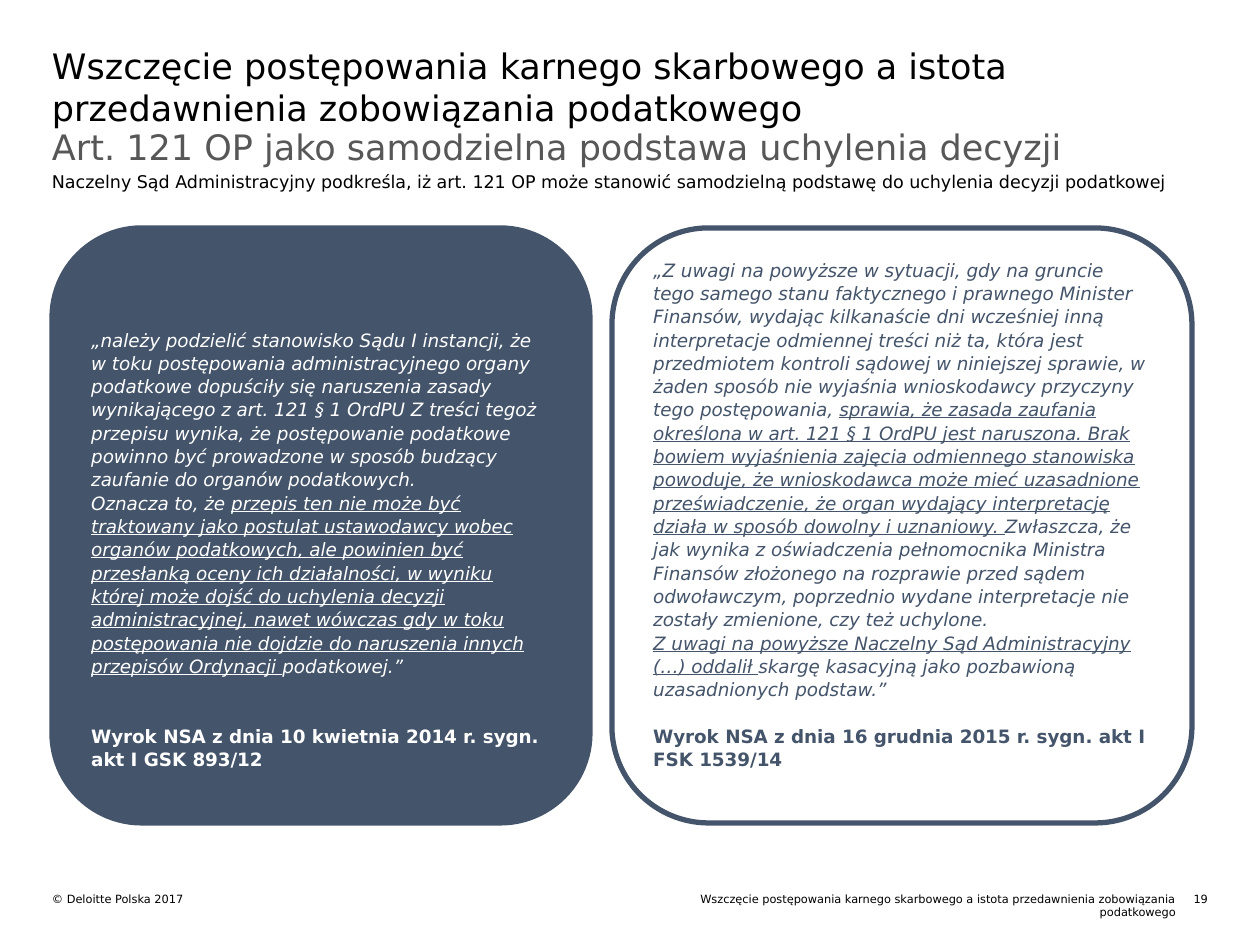
import pptx
import pptx.util
import pptx.dml.color
import pptx.enum.shapes
import pptx.enum.text
import lxml.etree

PX = 914400 // 126
FONT = "DejaVu Sans"
COLORS = {"black": "000000", "grey": "575757", "navy": "44546A", "white": "FFFFFF"}
ALIGN = pptx.enum.text.PP_ALIGN
ANCHOR = pptx.enum.text.MSO_ANCHOR

TITLE = ("Wszczęcie postępowania karnego skarbowego a istota "
         "przedawnienia zobowiązania podatkowego")
SUB = "Art. 121 OP jako samodzielna podstawa uchylenia decyzji"
LEAD = ("Naczelny Sąd Administracyjny podkreśla, iż art. 121 OP może stanowić "
        "samodzielną podstawę do uchylenia decyzji podatkowej")

# Small print: text, box in px, alignment
FOOT = [
    ("© Deloitte Polska 2017", (52, 892, 553, 14), ALIGN.LEFT),
    (TITLE, (670, 892, 506, 28), ALIGN.RIGHT),
    ("19", (1177, 892, 31, 14), ALIGN.RIGHT),
]

# Each quote is a list of paragraphs; a paragraph is a list of (text, underlined)
CARDS = [
    {"box": (52, 228, 538, 595), "fill": "navy", "ink": "white",
     "top": 60, "bottom": 13, "gap": 26.7,
     "quote": [
         [("„należy podzielić stanowisko Sądu I instancji, że w toku postępowania "
           "administracyjnego organy podatkowe dopuściły się naruszenia zasady "
           "wynikającego z art. 121 § 1 OrdPU Z treści tegoż przepisu wynika, że "
           "postępowanie podatkowe powinno być prowadzone w sposób budzący "
           "zaufanie do organów podatkowych.", False)],
         [("Oznacza to, że ", False),
          ("przepis ten nie może być traktowany jako postulat ustawodawcy wobec "
           "organów podatkowych, ale powinien być przesłanką oceny ich "
           "działalności, w wyniku której może dojść do uchylenia decyzji "
           "administracyjnej, nawet wówczas gdy w toku postępowania nie dojdzie "
           "do naruszenia innych przepisów Ordynacji ", True),
          ("podatkowej.”", False)],
     ],
     "case": "Wyrok NSA z dnia 10 kwietnia 2014 r. sygn. akt I GSK 893/12"},
    {"box": (612, 228, 580, 595), "fill": "white", "ink": "navy",
     "top": 13, "bottom": 36, "gap": 13.3,
     "quote": [
         [("„Z uwagi na powyższe w sytuacji, gdy na gruncie tego samego stanu "
           "faktycznego i prawnego Minister Finansów, wydając kilkanaście dni "
           "wcześniej inną interpretacje odmiennej treści niż ta, która jest "
           "przedmiotem kontroli sądowej w niniejszej sprawie, w żaden sposób nie "
           "wyjaśnia wnioskodawcy przyczyny tego postępowania, ", False),
          ("sprawia, że zasada zaufania określona w art. 121 § 1 OrdPU jest "
           "naruszona. Brak bowiem wyjaśnienia zajęcia odmiennego stanowiska "
           "powoduje, że wnioskodawca może mieć uzasadnione przeświadczenie, że "
           "organ wydający interpretację działa w sposób dowolny i uznaniowy. ", True),
          ("Zwłaszcza, że jak wynika z oświadczenia pełnomocnika Ministra Finansów "
           "złożonego na rozprawie przed sądem odwoławczym, poprzednio wydane "
           "interpretacje nie zostały zmienione, czy też uchylone.", False)],
         [("Z uwagi na powyższe Naczelny Sąd Administracyjny (…) oddalił ", True),
          ("skargę kasacyjną jako pozbawioną uzasadnionych podstaw.”", False)],
     ],
     "case": "Wyrok NSA z dnia 16 grudnia 2015 r. sygn. akt I FSK 1539/14"},
]


def rgb(name):
    return pptx.dml.color.RGBColor.from_string(COLORS[name])


def place(shape, box):
    shape.left, shape.top, shape.width, shape.height = (v * PX for v in box)


def frame(shape, pad=(0, 0, 0, 0), anchor=ANCHOR.TOP):
    """Set the insets (left, top, right, bottom) and give the text frame."""
    text = shape.text_frame
    text.word_wrap = True
    text.auto_size = pptx.enum.text.MSO_AUTO_SIZE.NONE
    text.vertical_anchor = anchor
    text.margin_left, text.margin_top, text.margin_right, text.margin_bottom = (
        v * PX for v in pad)
    return text


def write(para, text, size=10, color="black", bold=False, italic=False,
          under=False, align=ALIGN.LEFT, before=0, lines=1.0):
    """Add one run to a paragraph, with the paragraph's own format."""
    para.alignment = align
    para.space_before = pptx.util.Pt(before)
    para.line_spacing = lines
    run = para.add_run()
    run.text = text
    font = run.font
    font.name, font.size = FONT, pptx.util.Pt(size)
    font.bold, font.italic, font.underline = bold, italic, under
    font.color.rgb = rgb(color)


def label(slide, text, box, **form):
    shape = slide.shapes.add_textbox(0, 0, 0, 0)
    place(shape, box)
    write(frame(shape).paragraphs[0], text, **form)


def card(slide, data):
    shape = slide.shapes.add_shape(
        pptx.enum.shapes.MSO_SHAPE.ROUNDED_RECTANGLE, 0, 0, 0, 0)
    place(shape, data["box"])
    shape.shadow.inherit = False
    shape.fill.solid()
    shape.fill.fore_color.rgb = rgb(data["fill"])
    shape.line.color.rgb = rgb("navy")
    shape.line.width = pptx.util.Pt(3)
    text = frame(shape, (13, data["top"], 13, data["bottom"]), ANCHOR.MIDDLE)
    form = {"size": 10.5, "color": data["ink"], "lines": 1.06}
    for i, runs in enumerate(data["quote"]):
        para = text.add_paragraph() if i else text.paragraphs[0]
        for words, under in runs:
            write(para, words, italic=True, under=under, **form)
    write(text.add_paragraph(), data["case"], bold=True, before=data["gap"], **form)


def main():
    deck = pptx.Presentation()
    deck.slide_width, deck.slide_height = 1260 * PX, 945 * PX
    slide = deck.slides.add_slide(deck.slide_layouts[1])

    for text, box, align in FOOT:
        label(slide, text, box, size=6.5, align=align)

    body = slide.placeholders[1]
    place(body, (52, 67, 1157, 105))
    para = frame(body, (0, 58, 0, 0)).paragraphs[0]
    props = para._p.get_or_add_pPr()
    props.set("marL", "0")
    props.set("indent", "0")
    lxml.etree.SubElement(props, pptx.oxml.ns.qn("a:buNone"))
    write(para, SUB, size=20, color="grey")

    title = slide.shapes.title
    place(title, (52, 44, 1157, 47))
    write(frame(title).paragraphs[0], TITLE, size=20)

    label(slide, LEAD, (52, 171, 1120, 74))
    for data in CARDS:
        card(slide, data)
    deck.save("out.pptx")


if __name__ == "__main__":
    main()
